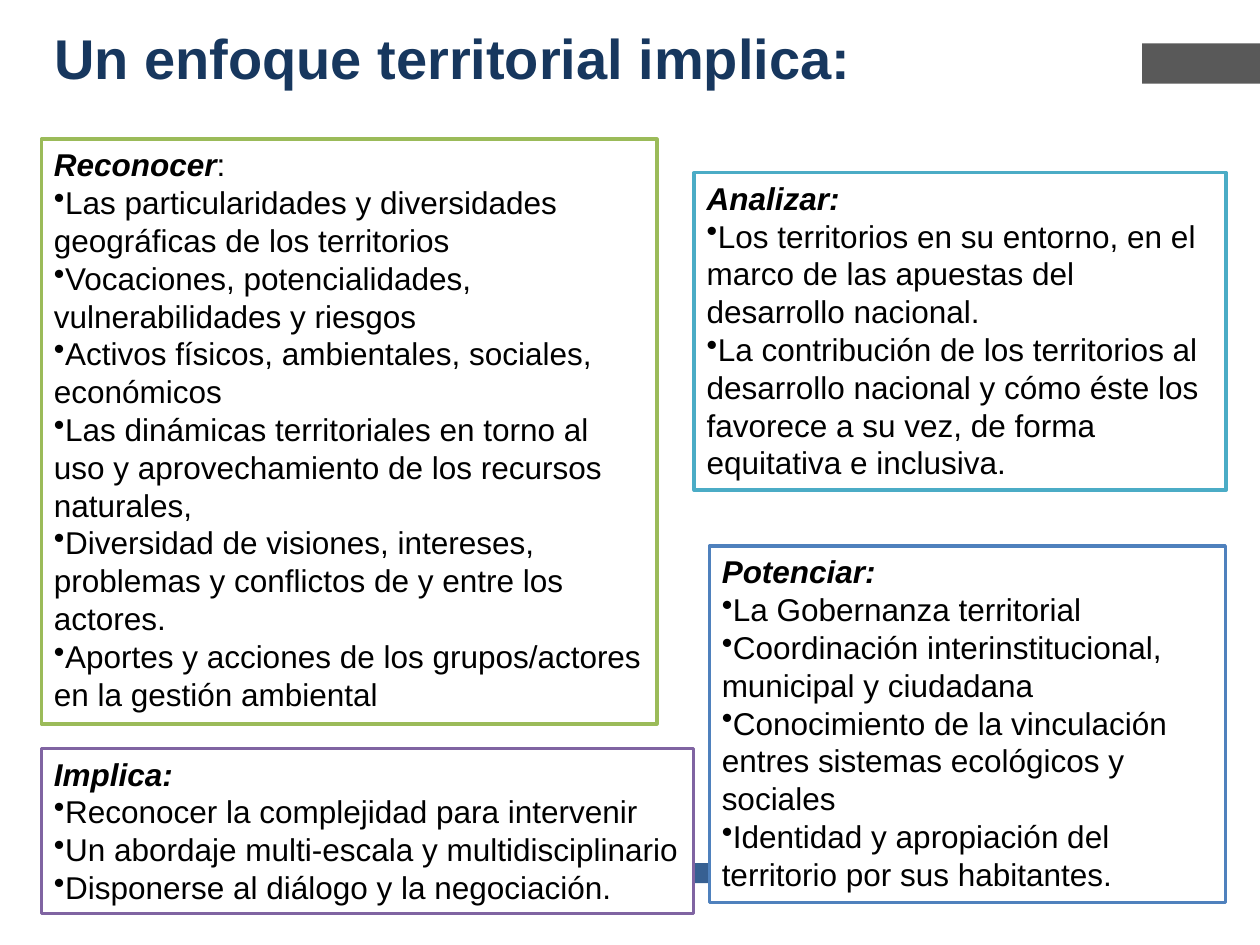
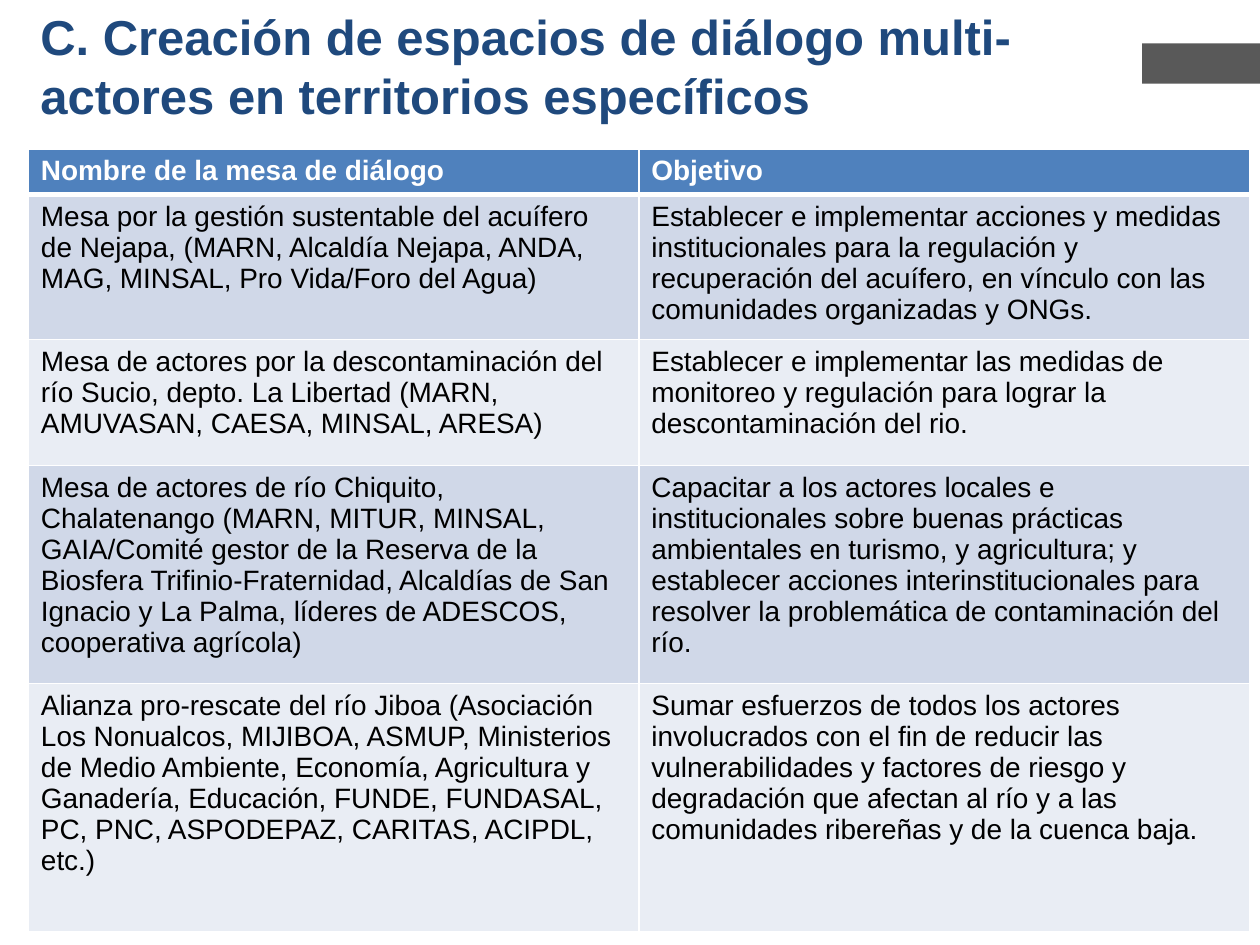
from dataclasses import dataclass
from typing import NamedTuple

from lxml import etree
from pptx import Presentation
from pptx.dml.color import RGBColor
from pptx.enum.shapes import MSO_SHAPE
from pptx.enum.text import MSO_ANCHOR, MSO_AUTO_SIZE, PP_ALIGN
from pptx.oxml.ns import qn
from pptx.util import Inches, Pt

RECT = MSO_SHAPE.RECTANGLE
TOP, LEFT = MSO_ANCHOR.TOP, PP_ALIGN.LEFT
GROW, FIXED = MSO_AUTO_SIZE.SHAPE_TO_FIT_TEXT, MSO_AUTO_SIZE.NONE
TITLE_ONLY = 5

# Grid of 100 columns by 75 rows
WIDE, HIGH = Inches(10), Inches(7.5)
COL, ROW = WIDE / 100, HIGH / 75


@dataclass(frozen=True)
class Theme:
    font: str = "Arial"
    white: str = "FFFFFF"
    black: str = "000000"
    navy: str = "17375E"
    blue: str = "1F497D"
    steel: str = "376092"
    gray: str = "595959"
    green: str = "9BBB59"
    aqua: str = "4BACC6"
    plum: str = "8064A2"
    azure: str = "4F81BD"
    stripes: tuple[str, str] = ("D0D8E8", "E9EDF4")
    head: int = 32
    subhead: int = 28
    body: int = 18
    cell: int = 16
    edge: int = 2
    rule: int = 1
    thick: int = 3


THEME = Theme()


class Area(NamedTuple):
    """Place on the grid, in columns and rows."""
    col: float
    row: float
    cols: float
    rows: float

    def emu(self) -> dict[str, int]:
        return {"left": round(self.col * COL), "top": round(self.row * ROW),
                "width": round(self.cols * COL), "height": round(self.rows * ROW)}


class Band(NamedTuple):
    area: Area
    color: str


class Head(NamedTuple):
    text: str
    area: Area
    size: int
    color: str


class Card(NamedTuple):
    area: Area
    edge: str
    name: str
    mark: str
    items: tuple[str, ...]


# Shared bands
BANDS = (
    Band(Area(19.6, 68.5, 52.2, 1.6), THEME.steel),
    Band(Area(90.65, 3.45, 9.35, 3.2), THEME.gray),
)

# First slide
FOCUS = Head("Un enfoque territorial implica:",
             Area(3.3, 1.4, 89, 6.3), THEME.head, THEME.navy)
CARDS = (
    Card(Area(3.3, 11.05, 48.85, 46.4), THEME.green, "Reconocer", ":", (
        "Las particularidades y diversidades geográficas de los territorios",
        "Vocaciones, potencialidades, vulnerabilidades y riesgos",
        "Activos físicos, ambientales, sociales, económicos",
        "Las dinámicas territoriales en torno al uso y aprovechamiento de los "
        "recursos naturales,",
        "Diversidad de visiones, intereses, problemas y conflictos de y entre "
        "los actores.",
        "Aportes y acciones de los grupos/actores en la gestión ambiental",
    )),
    Card(Area(55.1, 13.7, 42.2, 25.2), THEME.aqua, "Analizar:", "", (
        "Los territorios en su entorno, en el marco de las apuestas del "
        "desarrollo nacional.",
        "La contribución de los territorios al desarrollo nacional y cómo éste "
        "los favorece a su vez, de forma equitativa e inclusiva.",
    )),
    Card(Area(3.3, 59.4, 51.75, 13.1), THEME.plum, "Implica:", "", (
        "Reconocer la complejidad para intervenir",
        "Un abordaje multi-escala y multidisciplinario",
        "Disponerse al diálogo y la negociación.",
    )),
    Card(Area(56.3, 43.35, 40.95, 28.3), THEME.azure, "Potenciar:", "", (
        "La Gobernanza territorial",
        "Coordinación interinstitucional, municipal y ciudadana",
        "Conocimiento de la vinculación entres sistemas ecológicos y sociales",
        "Identidad y apropiación del territorio por sus habitantes.",
    )),
)

# Second slide
FORUMS = Head("C. Creación de espacios de diálogo multi-actores en territorios "
              "específicos", Area(2.2, 0, 92.8, 11.9), THEME.subhead, THEME.blue)
GRID = Area(2.25, 11.85, 96.9, 62.1)
DEPTHS = (3.6, 11.5, 10, 17.3, 19.7)
ROWS = (
    ("Nombre de la mesa de diálogo", "Objetivo"),
    ("Mesa por la gestión sustentable del acuífero de Nejapa, (MARN, Alcaldía "
     "Nejapa, ANDA, MAG, MINSAL, Pro Vida/Foro del Agua)",
     "Establecer e implementar acciones y medidas institucionales para la "
     "regulación y recuperación del acuífero, en vínculo con las comunidades "
     "organizadas y ONGs."),
    ("Mesa de actores por la descontaminación del río Sucio, depto. La Libertad "
     "(MARN, AMUVASAN, CAESA, MINSAL, ARESA)",
     "Establecer e implementar las medidas de monitoreo y regulación para lograr "
     "la descontaminación del rio."),
    ("Mesa de actores de río Chiquito, Chalatenango (MARN, MITUR, MINSAL, "
     "GAIA/Comité gestor de la Reserva de la Biosfera Trifinio-Fraternidad, "
     "Alcaldías de San Ignacio y La Palma, líderes de ADESCOS, cooperativa "
     "agrícola)",
     "Capacitar a los actores locales e institucionales sobre buenas prácticas "
     "ambientales en turismo, y agricultura; y establecer acciones "
     "interinstitucionales para resolver la problemática de contaminación del "
     "río."),
    ("Alianza pro-rescate del río Jiboa (Asociación Los Nonualcos, MIJIBOA, "
     "ASMUP, Ministerios de Medio Ambiente, Economía, Agricultura y Ganadería, "
     "Educación, FUNDE, FUNDASAL, PC, PNC, ASPODEPAZ, CARITAS, ACIPDL, etc.)",
     "Sumar esfuerzos de todos los actores involucrados con el fin de reducir "
     "las vulnerabilidades y factores de riesgo y degradación que afectan al río "
     "y a las comunidades ribereñas y de la cuenca baja."),
)


def apply(target, values: dict) -> None:
    for key, value in values.items():
        setattr(target, key, value)


def paint(fill, color: str) -> None:
    fill.solid()
    fill.fore_color.rgb = RGBColor.from_string(color)


def write(para, text: str, size: int, color: str, bold: bool = False,
          slant: bool = False) -> None:
    run = para.add_run()
    run.text = text
    apply(run.font, {"name": THEME.font, "size": Pt(size), "bold": bold,
                     "italic": slant})
    run.font.color.rgb = RGBColor.from_string(color)


def add_rect(slide, area: Area, color: str):
    box = slide.shapes.add_shape(RECT, **area.emu())
    box.shadow.inherit = False
    paint(box.fill, color)
    box.line.fill.background()
    return box


def add_bands(slide, layout) -> None:
    """Move the bands to the layout, so that each slide shows them."""
    for band in BANDS:
        box = add_rect(slide, band.area, band.color)
        layout.shapes.element.append(box.element)


def add_head(slide, head: Head) -> None:
    title = slide.shapes.title
    apply(title, head.area.emu())
    frame = title.text_frame
    apply(frame, {"word_wrap": True, "auto_size": FIXED, "vertical_anchor": TOP})
    para = frame.paragraphs[0]
    para.alignment = LEFT
    write(para, head.text, head.size, head.color, bold=True)


def add_dot(para) -> None:
    props = para._p.get_or_add_pPr()
    for key in ("marL", "indent"):
        props.set(key, "0")
    etree.SubElement(props, qn("a:buChar"), char="•")


def add_card(slide, card: Card) -> None:
    box = add_rect(slide, card.area, THEME.white)
    paint(box.line.fill, card.edge)
    box.line.width = Pt(THEME.edge)
    frame = box.text_frame
    apply(frame, {"word_wrap": True, "auto_size": GROW, "vertical_anchor": TOP})
    first = frame.paragraphs[0]
    write(first, card.name, THEME.body, THEME.black, bold=True, slant=True)
    if card.mark:
        write(first, card.mark, THEME.body, THEME.black)
    for item in card.items:
        para = frame.add_paragraph()
        add_dot(para)
        write(para, item, THEME.body, THEME.black)
    for para in frame.paragraphs:
        para.alignment = LEFT


def add_rules(cell, base: int, roof: int) -> None:
    props = cell._tc.get_or_add_tcPr()
    widths = {"L": THEME.rule, "R": THEME.rule, "T": roof, "B": base}
    for side, width in widths.items():
        line = etree.SubElement(props, qn(f"a:ln{side}"), w=str(Pt(width)))
        fill = etree.SubElement(line, qn("a:solidFill"))
        etree.SubElement(fill, qn("a:srgbClr"), val=THEME.white)


def add_grid(slide) -> None:
    count = len(ROWS[0])
    table = slide.shapes.add_table(len(ROWS), count, **GRID.emu()).table
    for col in table.columns:
        col.width = round(GRID.cols * COL / count)
    for row, (texts, depth) in enumerate(zip(ROWS, DEPTHS)):
        table.rows[row].height = round(depth * ROW)
        top = row == 0
        back = THEME.azure if top else THEME.stripes[(row - 1) % 2]
        ink = THEME.white if top else THEME.black
        for col, text in enumerate(texts):
            cell = table.cell(row, col)
            add_rules(cell, THEME.thick if top else THEME.rule,
                      THEME.thick if row == 1 else THEME.rule)
            paint(cell.fill, back)
            write(cell.text_frame.paragraphs[0], text, THEME.cell, ink, bold=top)


def main() -> None:
    deck = Presentation()
    apply(deck, {"slide_width": WIDE, "slide_height": HIGH})
    layout = deck.slide_layouts[TITLE_ONLY]

    # What a territorial focus implies
    slide = deck.slides.add_slide(layout)
    add_bands(slide, layout)
    add_head(slide, FOCUS)
    for card in CARDS:
        add_card(slide, card)

    # Forums for dialogue
    slide = deck.slides.add_slide(layout)
    add_head(slide, FORUMS)
    add_grid(slide)

    deck.save("out.pptx")


if __name__ == "__main__":
    main()
